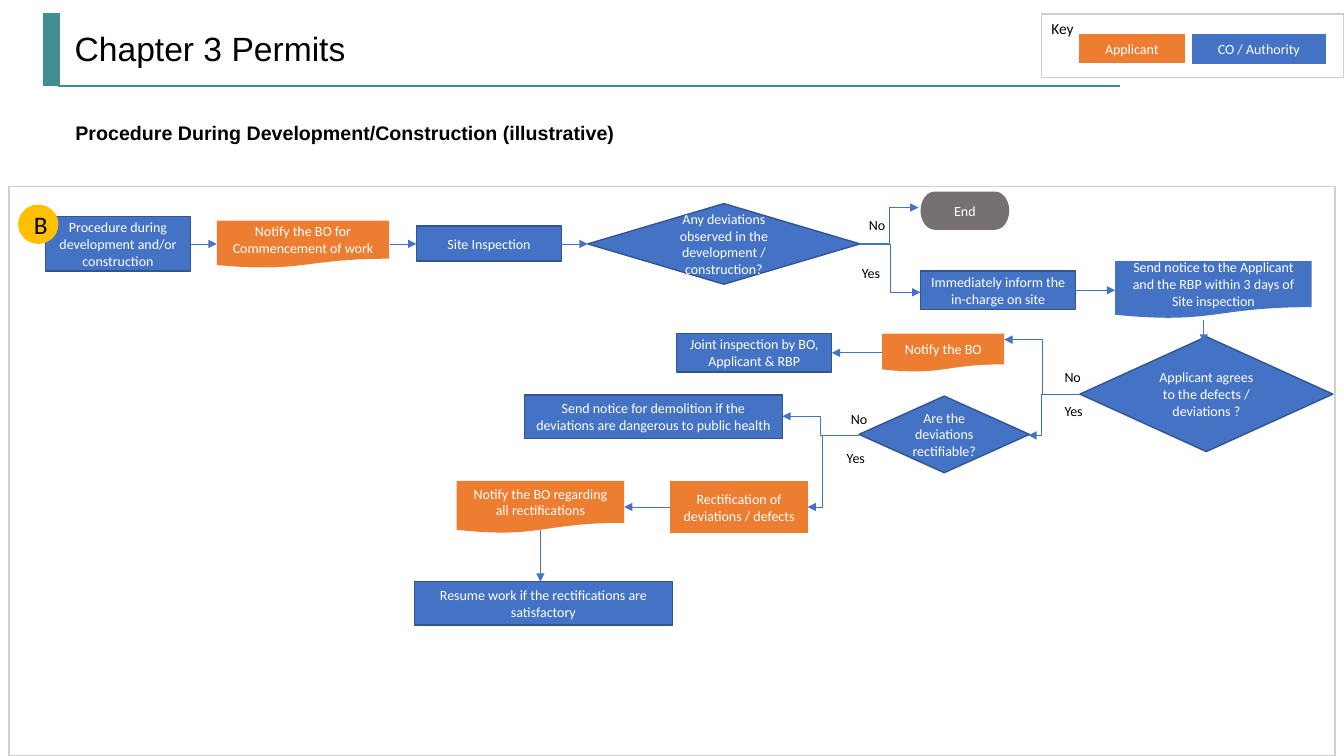
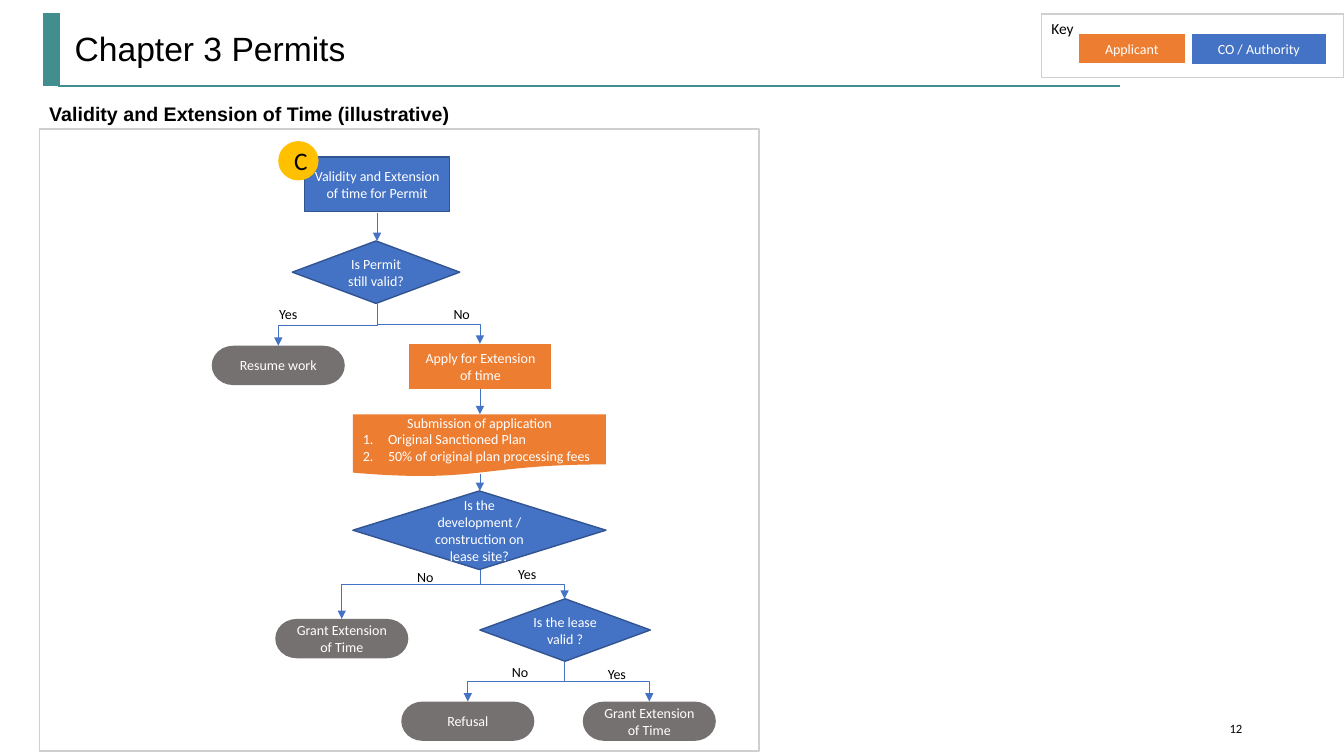
from lxml import etree
from pptx import Presentation
from pptx.dml.color import RGBColor
from pptx.enum.shapes import MSO_CONNECTOR, MSO_SHAPE
from pptx.enum.text import MSO_ANCHOR, PP_ALIGN
from pptx.oxml.ns import qn
from pptx.util import Inches, Pt

# Shared colours and shape kinds
TEAL = RGBColor(0x42, 0x8D, 0x8E)
ORANGE = RGBColor(0xED, 0x7D, 0x31)
BLUE = RGBColor(0x44, 0x72, 0xC4)
NAVY = RGBColor(0x32, 0x54, 0x91)
GREY = RGBColor(0x76, 0x71, 0x71)
PALE = RGBColor(0xD0, 0xCE, 0xCE)
YELLOW = RGBColor(0xFF, 0xC0, 0x00)
BLACK = RGBColor(0, 0, 0)
WHITE = RGBColor(0xFF, 0xFF, 0xFF)

RECT = MSO_SHAPE.RECTANGLE
PROCESS = MSO_SHAPE.FLOWCHART_PROCESS
DOCUMENT = MSO_SHAPE.FLOWCHART_DOCUMENT
DECISION = MSO_SHAPE.FLOWCHART_DECISION
TERMINATOR = MSO_SHAPE.FLOWCHART_TERMINATOR


def add_box(s, kind, at, text="", fill=None, edge=None, size=10, color=WHITE,
            align=PP_ALIGN.CENTER, anchor=MSO_ANCHOR.MIDDLE):
    """Add a shape, or a text box when kind is None, with uniform text."""
    at = [Inches(v) for v in at]
    if kind is None:
        sp = s.shapes.add_textbox(*at)
    else:
        sp = s.shapes.add_shape(kind, *at)
        sp.shadow.inherit = False
        if fill is None:
            sp.fill.background()
        else:
            sp.fill.solid()
            sp.fill.fore_color.rgb = fill
        if edge is None:
            sp.line.fill.background()
        else:
            sp.line.color.rgb = edge
            sp.line.width = Pt(1)
    tf = sp.text_frame
    tf.word_wrap = True
    tf.vertical_anchor = anchor
    tf.text = text
    for p in tf.paragraphs:
        p.alignment = align
        for r in p.runs:
            r.font.name = "Calibri"
            r.font.size = Pt(size)
            r.font.color.rgb = color
    return sp


def add_line(s, x1, y1, x2, y2, color=BLUE, width=0.5, head=True, bend=0.5, down=False):
    """Add a straight or elbow line; down makes an elbow leave vertically."""
    straight = x1 == x2 or y1 == y2
    turn = 0
    if down:
        # A vertical elbow is a horizontal one turned about its centre
        turn = 1 if x2 < x1 else -1
        cx, cy = (x1 + x2) / 2, (y1 + y2) / 2
        x1, y1, x2, y2 = (cx + turn * (y1 - cy), cy - turn * (x1 - cx),
                          cx + turn * (y2 - cy), cy - turn * (x2 - cx))
    kind = MSO_CONNECTOR.STRAIGHT if straight else MSO_CONNECTOR.ELBOW
    c = s.shapes.add_connector(kind, *[Inches(v) for v in (x1, y1, x2, y2)])
    c.line.color.rgb = color
    c.line.width = Pt(width)
    spPr = c._element.spPr
    if turn:
        spPr.find(qn("a:xfrm")).set("rot", str(turn * 5400000 % 21600000))
    if not straight:
        guides = spPr.find(qn("a:prstGeom")).find(qn("a:avLst"))
        etree.SubElement(guides, qn("a:gd"), name="adj1", fmla=f"val {round(bend * 100000)}")
    if head:
        etree.SubElement(spPr.find(qn("a:ln")), qn("a:tailEnd"), type="triangle")
    etree.SubElement(spPr, qn("a:effectLst"))


# Slide content: nodes, arrows (with elbow bend) and branch labels
construction = {
    "heading": ("Procedure During Development/Construction (illustrative)", (0.65, 1.1, 10.13, 0.36)),
    "frame": (0.09, 1.85, 13.15, 5.65),
    "badge": ("B", (0.18, 2.03, 0.4, 0.39)),
    "nodes": [
        (PROCESS, BLUE, (0.45, 2.15, 1.44, 0.54), "Procedure during development and/or construction"),
        (DOCUMENT, ORANGE, (2.15, 2.19, 1.71, 0.47), "Notify the BO for Commencement of work"),
        (PROCESS, BLUE, (4.13, 2.24, 1.44, 0.35), "Site Inspection"),
        (DECISION, BLUE, (5.83, 2.02, 2.7, 0.8),
         "Any deviations observed in the development / construction?"),
        (TERMINATOR, GREY, (9.13, 1.9, 0.88, 0.38), "End"),
        (PROCESS, BLUE, (9.13, 2.69, 1.54, 0.38), "Immediately inform the in-charge on site"),
        (DOCUMENT, BLUE, (11.06, 2.59, 1.95, 0.57),
         "Send notice to the Applicant and the RBP within 3 days of Site inspection"),
        (DECISION, BLUE, (10.71, 3.34, 2.51, 1.14), "Applicant agrees to the defects / deviations ?"),
        (DOCUMENT, ORANGE, (8.75, 3.31, 1.21, 0.38), "Notify the BO"),
        (PROCESS, BLUE, (6.71, 3.31, 1.54, 0.38), "Joint inspection by BO, Applicant & RBP"),
        (DECISION, BLUE, (8.52, 3.93, 1.69, 0.76), "Are the deviations rectifiable?"),
        (RECT, BLUE, (5.2, 3.92, 2.56, 0.43),
         "Send notice for demolition if the deviations are dangerous to public health"),
        (PROCESS, ORANGE, (6.65, 4.77, 1.36, 0.52), "Rectification of deviations / defects"),
        (DOCUMENT, ORANGE, (4.53, 4.77, 1.66, 0.52), "Notify the BO regarding all rectifications"),
        (RECT, BLUE, (4.11, 5.77, 2.56, 0.43), "Resume work if the rectifications are satisfactory"),
    ],
    "down": False,
    "arrows": [
        (1.89, 2.42, 2.15, 2.42), (3.87, 2.42, 4.13, 2.42), (5.56, 2.42, 5.83, 2.42),
        (8.53, 2.42, 9.11, 2.06), (8.53, 2.42, 9.13, 2.9), (10.66, 2.88, 11.06, 2.88),
        (11.94, 3.17, 11.94, 3.4), (10.71, 3.91, 9.96, 3.37), (10.71, 3.91, 10.2, 4.32, 0.75),
        (8.75, 3.5, 8.25, 3.5), (8.52, 4.32, 7.76, 4.13), (8.52, 4.32, 8.01, 5.03, 0.72),
        (6.65, 5.03, 6.19, 5.03), (5.36, 5.26, 5.36, 5.77),
    ],
    "labels": [
        ("No", 8.52, 2.1), ("Yes", 8.45, 2.58), ("No", 10.46, 3.61), ("Yes", 10.46, 3.94),
        ("No", 8.34, 4.02), ("Yes", 8.3, 4.41),
    ],
}
extension = {
    "heading": ("Validity and Extension of Time (illustrative)", (0.39, 0.92, 6.7, 0.36)),
    "frame": (0.39, 1.28, 7.14, 6.17),
    "badge": ("C", (2.76, 1.4, 0.4, 0.39)),
    "nodes": [
        (PROCESS, BLUE, (3.02, 1.56, 1.44, 0.54), "Validity and Extension of time for Permit"),
        (DECISION, BLUE, (2.9, 2.39, 1.66, 0.62), "Is Permit still valid?"),
        (TERMINATOR, GREY, (2.1, 3.43, 1.32, 0.39), "Resume work"),
        (PROCESS, ORANGE, (4.06, 3.41, 1.41, 0.45), "Apply for Extension of time"),
        (DOCUMENT, ORANGE, (3.5, 4.11, 2.51, 0.62),
         "Submission of application\nOriginal Sanctioned Plan\n50% of original plan processing fees"),
        (DECISION, BLUE, (3.5, 4.87, 2.51, 0.78), "Is the development / construction on lease site?"),
        (TERMINATOR, GREY, (2.73, 6.14, 1.32, 0.39), "Grant Extension of Time"),
        (DECISION, BLUE, (4.76, 5.94, 1.69, 0.62), "Is the lease valid ?"),
        (TERMINATOR, GREY, (3.98, 6.96, 1.32, 0.39), "Refusal"),
        (TERMINATOR, GREY, (5.78, 6.96, 1.32, 0.39), "Grant Extension of Time"),
    ],
    "down": True,
    "arrows": [
        (3.74, 2.11, 3.74, 2.39), (3.74, 3.02, 2.76, 3.43), (3.74, 3.02, 4.76, 3.41),
        (4.76, 3.86, 4.76, 4.11), (4.76, 4.7, 4.76, 4.87), (4.76, 5.65, 3.39, 6.14, 0.31),
        (4.76, 5.65, 5.6, 5.94), (5.6, 6.56, 4.64, 6.96), (5.6, 6.56, 6.44, 6.96),
    ],
    "labels": [
        ("Yes", 2.67, 2.98), ("No", 4.4, 2.98), ("No", 4.04, 5.59), ("Yes", 5.04, 5.56),
        ("No", 4.98, 6.53), ("Yes", 5.93, 6.55),
    ],
}

prs = Presentation()
prs.slide_width = Inches(13.33)
prs.slide_height = Inches(7.5)

for chart in (construction, extension):
    s = prs.slides.add_slide(prs.slide_layouts[5])

    # Title and teal band
    add_line(s, 0.58, 0.85, 11.11, 0.85, TEAL, 1.5, head=False)
    add_line(s, 0.51, 0.85, 0.51, 0.13, TEAL, 12, head=False)
    title = s.shapes.title
    title.left, title.top, title.width, title.height = [Inches(v) for v in (0.64, 0.21, 11.14, 0.59)]
    tf = title.text_frame
    tf.text = "Chapter 3 Permits"
    tf.vertical_anchor = MSO_ANCHOR.MIDDLE
    p = tf.paragraphs[0]
    p.alignment = PP_ALIGN.LEFT
    p.line_spacing = 0.9
    font = p.runs[0].font
    font.name, font.size, font.color.rgb = "Arial", Pt(24), BLACK

    # Heading
    text, at = chart["heading"]
    sp = add_box(s, None, at, text, size=14, color=BLACK, align=PP_ALIGN.LEFT, anchor=MSO_ANCHOR.TOP)
    p = sp.text_frame.paragraphs[0]
    p.line_spacing = 1.2
    p.space_before = p.space_after = Pt(6)
    p.runs[0].font.name = "Arial"
    p.runs[0].font.bold = True

    # Key
    add_box(s, RECT, (10.33, 0.14, 3, 0.63), "Key", edge=PALE, size=11, color=BLACK,
            align=PP_ALIGN.LEFT, anchor=MSO_ANCHOR.TOP)
    add_box(s, PROCESS, (10.7, 0.34, 1.05, 0.28), "Applicant", ORANGE)
    add_box(s, PROCESS, (11.82, 0.34, 1.33, 0.29), "CO / Authority", BLUE)

    # Flow chart
    add_box(s, RECT, chart["frame"], edge=PALE)
    for kind, fill, at, text in chart["nodes"]:
        edge = NAVY if fill == BLUE and kind != DOCUMENT else None
        sp = add_box(s, kind, at, text, fill, edge)
        # Lines after the first form a numbered list
        for p in sp.text_frame.paragraphs[1:]:
            p.alignment = PP_ALIGN.LEFT
            pPr = p._p.get_or_add_pPr()
            pPr.set("marL", str(Inches(0.25)))
            pPr.set("indent", str(-Inches(0.25)))
            etree.SubElement(pPr, qn("a:buAutoNum"), type="arabicPeriod")
    for x1, y1, x2, y2, *bend in chart["arrows"]:
        elbow = x1 != x2 and y1 != y2
        add_line(s, x1, y1, x2, y2, bend=bend[0] if bend else 0.5, down=chart["down"] and elbow)
    for text, x, y in chart["labels"]:
        add_box(s, None, (x, y, 0.5, 0.27), text, color=BLACK, align=PP_ALIGN.LEFT,
                anchor=MSO_ANCHOR.TOP)
    text, at = chart["badge"]
    add_box(s, MSO_SHAPE.OVAL, at, text, YELLOW, size=18, color=BLACK)

# Page number on the last slide
add_box(s, None, (9.42, 6.95, 3, 0.4), "12", size=9, color=BLACK, align=PP_ALIGN.RIGHT,
        anchor=MSO_ANCHOR.BOTTOM)

prs.save("out.pptx")
